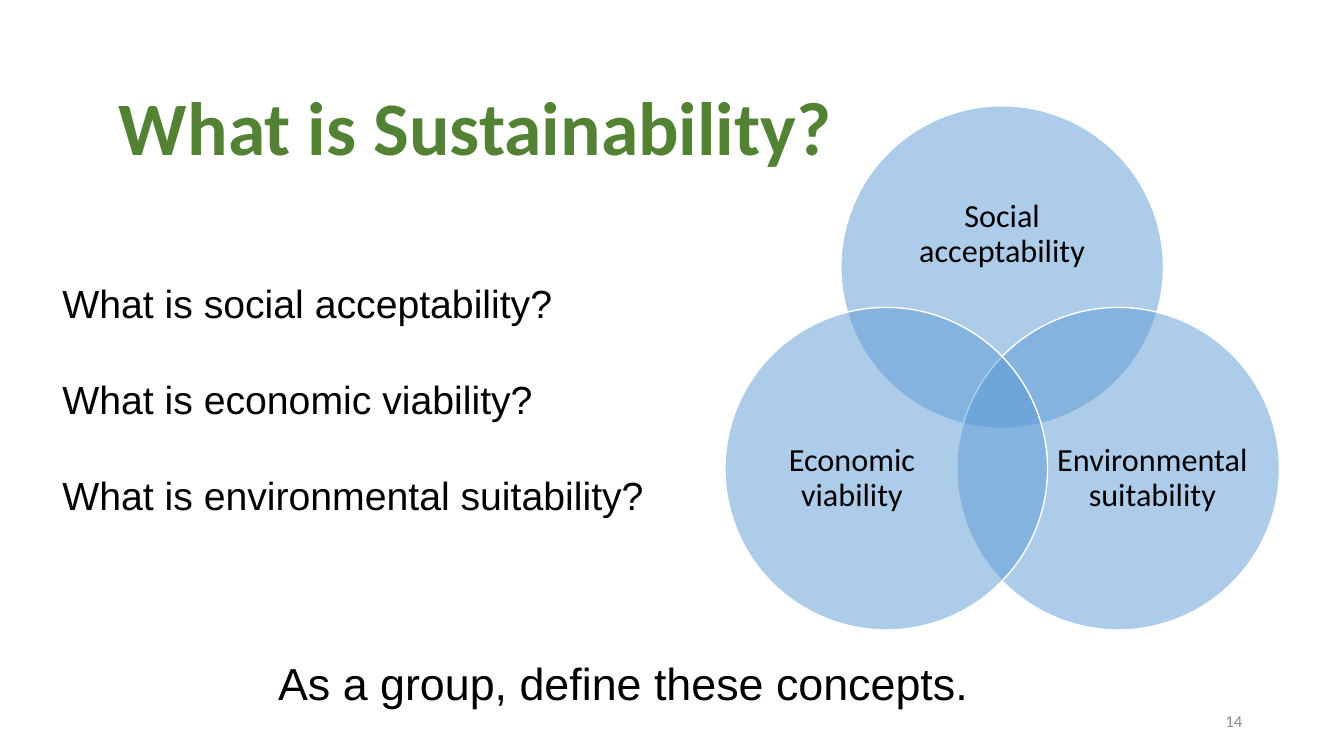
from lxml.etree import SubElement
from pptx import Presentation
from pptx.dml.color import RGBColor
from pptx.enum.shapes import MSO_SHAPE
from pptx.enum.text import MSO_ANCHOR, MSO_AUTO_SIZE, PP_ALIGN
from pptx.oxml.ns import qn
from pptx.util import Inches, Pt

COLORS = {
    "heading": "548235",
    "body": "000000",
    "circle": "5B9BD5",
    "outline": "FFFFFF",
    "number": "8C8C8C",
}


def write(box, lines, color, font, frame=None, paragraph=None):
    text_frame = box.text_frame
    frame_format = {"word_wrap": True, "auto_size": MSO_AUTO_SIZE.NONE, **(frame or {})}
    for name, value in frame_format.items():
        setattr(text_frame, name, value)
    text_frame.text = "\n".join(lines)
    for line in text_frame.paragraphs:
        for name, value in (paragraph or {}).items():
            setattr(line, name, value)
        run_font = line.runs[0].font
        for name, value in font.items():
            setattr(run_font, name, value)
        run_font.color.rgb = RGBColor.from_string(COLORS[color])


presentation = Presentation()
presentation.slide_width = Inches(13.33)
presentation.slide_height = Inches(7.5)
slide = presentation.slides.add_slide(presentation.slide_layouts[5])
middle = {"vertical_anchor": MSO_ANCHOR.MIDDLE}

heading = slide.shapes.title
heading_place = {"left": 1.08, "top": 0.57, "width": 11.5, "height": 1.45}
for name, value in heading_place.items():
    setattr(heading, name, Inches(value))
write(heading, ["What is Sustainability?"], "heading",
      {"name": "Calibri", "size": Pt(54), "bold": True}, middle,
      {"alignment": PP_ALIGN.LEFT, "line_spacing": 0.9})

questions = slide.shapes.add_textbox(Inches(0.52), Inches(2.72), Inches(6.31), Inches(2.93))
write(questions,
      ["What is social acceptability?",
       "What is economic viability?",
       "What is environmental suitability?"],
      "body", {"name": "Arial", "size": Pt(28)}, paragraph={"space_after": Pt(35)})

diameter = Inches(3.2)
label_frame = {**middle, "margin_left": 0, "margin_right": 0, "margin_top": 0, "margin_bottom": 0}
pillars = [
    ("Social acceptability", (8.34, 1.05), (8.77, 1.61, 2.34, 1.44)),
    ("Environmental suitability", (9.49, 3.05), (10.47, 3.87, 1.92, 1.76)),
    ("Economic viability", (7.19, 3.05), (7.49, 3.87, 1.92, 1.76)),
]
venn = slide.shapes.add_group_shape()
for pillar, (left, top), label_place in pillars:
    circle = venn.shapes.add_shape(MSO_SHAPE.OVAL, Inches(left), Inches(top), diameter, diameter)
    circle.shadow.inherit = False
    circle.fill.solid()
    circle.fill.fore_color.rgb = RGBColor.from_string(COLORS["circle"])
    circle_color = circle.fill._xPr.find(qn("a:solidFill")).find(qn("a:srgbClr"))
    SubElement(circle_color, qn("a:alpha"), val="50000")
    circle.line.color.rgb = RGBColor.from_string(COLORS["outline"])
    circle.line.width = Pt(1)

    label = venn.shapes.add_textbox(*map(Inches, label_place))
    write(label, [pillar], "body", {"name": "Calibri", "size": Pt(23)}, label_frame,
          {"alignment": PP_ALIGN.CENTER, "line_spacing": 0.9})

task = slide.shapes.add_textbox(Inches(1.52), Inches(6.46), Inches(9.33), Inches(0.9))
write(task, ["As a group, define these concepts."], "body",
      {"name": "Arial", "size": Pt(32)}, paragraph={"alignment": PP_ALIGN.CENTER})

page_number = slide.shapes.add_textbox(Inches(9.42), Inches(6.95), Inches(3), Inches(0.4))
write(page_number, ["14"], "number", {"name": "Calibri", "size": Pt(12)}, middle,
      {"alignment": PP_ALIGN.RIGHT})

presentation.save("out.pptx")
